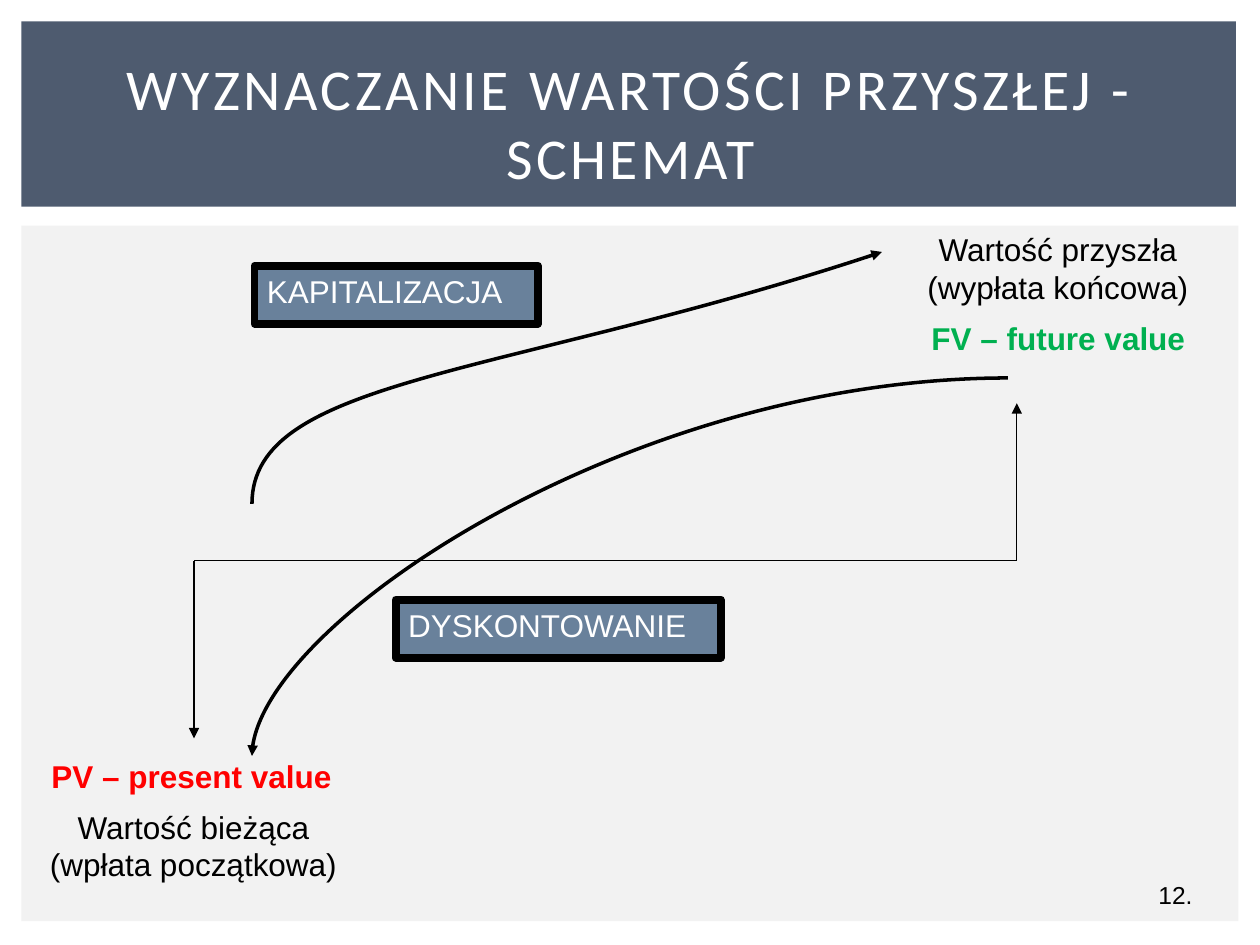
from lxml import etree
from pptx import Presentation
from pptx import util as u
from pptx.dml.color import RGBColor
from pptx.enum import shapes, text
from pptx.oxml import ns

BLACK = RGBColor(0, 0, 0)
WHITE = RGBColor(255, 255, 255)
NAVY = RGBColor(0x4E, 0x5B, 0x6F)
STEEL = RGBColor(0x69, 0x81, 0x9B)
PALE = RGBColor(0xF2, 0xF2, 0xF2)
RED = RGBColor(255, 0, 0)
GREEN = RGBColor(0, 0xB0, 0x50)
CENTER, LEFT = text.PP_ALIGN.CENTER, text.PP_ALIGN.LEFT

HEADING = "WYZNACZANIE WARTOŚCI PRZYSZŁEJ - SCHEMAT"
PANELS = [((0.17, 1.79, 9.66, 5.52), PALE), ((0.17, 0.17, 9.64, 1.47), NAVY)]
LABELS = [
    (["Wartość bieżąca", "(wpłata początkowa)"], (0.27, 6.36, 2.53, 0.71), BLACK, False, CENTER),
    (["Wartość przyszła", "(wypłata końcowa)"], (7.17, 1.78, 2.45, 0.71), BLACK, False, CENTER),
    (["PV – present value"], (0.31, 5.96, 2.83, 0.4), RED, True, LEFT),
    (["FV – future value"], (7.17, 2.48, 2.46, 0.4), GREEN, True, CENTER),
]
PROCESSES = [("KAPITALIZACJA", (2.02, 2.11, 2.25, 0.46)),
             ("DYSKONTOWANIE", (3.14, 4.76, 2.58, 0.46))]
START, END, AXIS = 1.54, 8.07, 4.45
TIMELINE = [((START, AXIS), (END, AXIS), False),
            ((START, AXIS), (START, 5.86), True),
            ((END, AXIS), (END, 3.2), True)]
CURVES = [
    [(1.54, 3.88), (1.68, 3.15), (4.11, 2.54), (7.31, 2.45)],
    [(7.86, 3.32), (4.71, 3.48), (2.3, 4.51), (2.17, 5.76)],
]


def inches(values):
    return [u.Inches(v) for v in values]


def write(frame, lines, size, color, align, bold=False, font="Arial"):
    frame.word_wrap = True
    paragraph = frame.paragraphs[0]
    paragraph.alignment = align
    for i, line in enumerate(lines):
        if i:
            paragraph.add_line_break()
        run = paragraph.add_run()
        run.text = line
        run.font.name, run.font.size = font, u.Pt(size)
        run.font.bold = bold
        run.font.color.rgb = color
    return run


def add_box(slide, place, fill):
    box = slide.shapes.add_shape(shapes.MSO_SHAPE.RECTANGLE, *inches(place))
    box.shadow.inherit = False
    box.fill.solid()
    box.fill.fore_color.rgb = fill
    box.line.fill.background()
    return box


def stroke(line, width, arrow=False):
    line.color.rgb = BLACK
    line.width = u.Pt(width)
    if arrow:
        etree.SubElement(line._get_or_add_ln(), ns.qn("a:tailEnd"), type="triangle")


def add_curve(slide, points):
    builder = slide.shapes.build_freeform(*points[0], scale=u.Inches(1))
    builder.add_line_segments(points[1:], close=False)
    curve = builder.convert_to_shape()
    segments = list(curve._element.iter(ns.qn("a:lnTo")))
    bezier = etree.Element(ns.qn("a:cubicBezTo"))
    segments[0].addprevious(bezier)
    for segment in segments:
        bezier.append(segment[0])
        segment.getparent().remove(segment)
    curve.shadow.inherit = False
    curve.fill.background()
    stroke(curve.line, 2, True)


def main():
    deck = Presentation()
    deck.slide_width, deck.slide_height = inches((10, 7.5))
    slide = deck.slides.add_slide(deck.slide_layouts[5])

    for place, fill in PANELS:
        add_box(slide, place, fill)

    title = slide.shapes.title
    slide.shapes._spTree.append(title._element)
    title.left, title.top, title.width, title.height = inches((0.42, 0.39, 9.17, 1.15))
    title.text_frame.vertical_anchor = text.MSO_ANCHOR.MIDDLE
    heading = write(title.text_frame, [HEADING], 33, WHITE, CENTER, font="Calibri")
    heading.font._element.set("spc", "200")

    number = slide.shapes.add_textbox(*inches((9.01, 6.95, 0.64, 0.3))).text_frame
    number.vertical_anchor = text.MSO_ANCHOR.MIDDLE
    write(number, ["12."], 14, BLACK, CENTER)

    for lines, place, color, bold, align in LABELS:
        label = slide.shapes.add_textbox(*inches(place))
        write(label.text_frame, lines, 18, color, align, bold)

    for begin, finish, arrow in TIMELINE:
        axis = slide.shapes.add_connector(
            shapes.MSO_CONNECTOR.STRAIGHT, *inches(begin + finish))
        stroke(axis.line, 0.75, arrow)
        etree.SubElement(axis._element.spPr, ns.qn("a:effectLst"))

    for points in CURVES:
        add_curve(slide, points)

    for name, place in PROCESSES:
        process = add_box(slide, place, STEEL)
        stroke(process.line, 4.5)
        process.text_frame.vertical_anchor = text.MSO_ANCHOR.TOP
        write(process.text_frame, [name], 18, WHITE, LEFT)

    deck.save("out.pptx")


if __name__ == "__main__":
    main()
